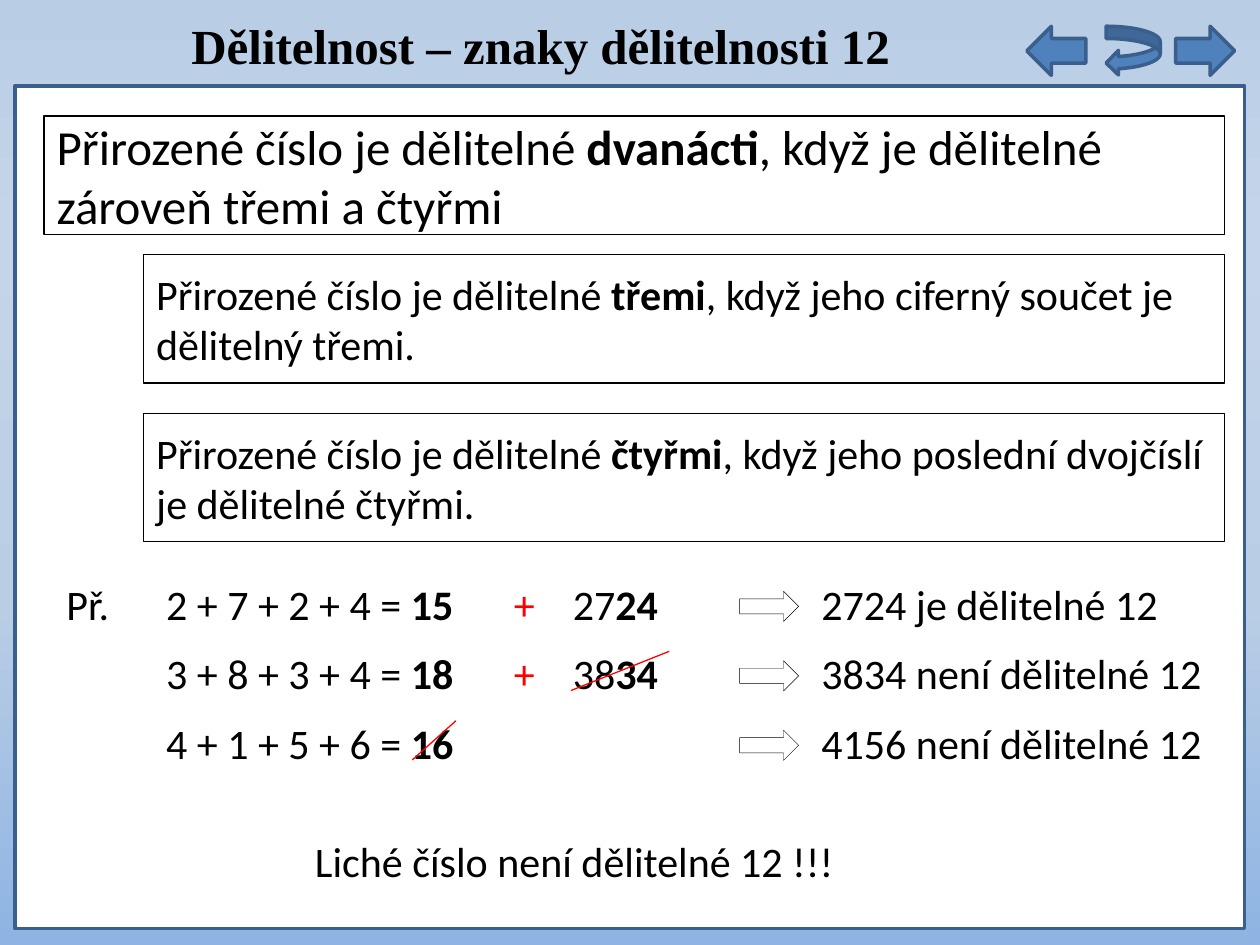
from dataclasses import dataclass

from lxml.etree import SubElement
from pptx import Presentation
from pptx.dml.color import RGBColor as RGB
from pptx.enum.shapes import MSO_CONNECTOR as LINE, MSO_SHAPE as KIND
from pptx.enum.text import MSO_ANCHOR as ANCHOR, MSO_AUTO_SIZE as AUTO, PP_ALIGN as ALIGN
from pptx.oxml.ns import qn
from pptx.util import Cm, Pt


@dataclass(frozen=True)
class Theme:
    head: str = "Times New Roman"
    body: str = "Calibri"
    big: int = 28
    mid: int = 24
    ink: str = "000000"
    red: str = "FF0000"
    blue: str = "4F81BD"
    edge: str = "3A5F8C"
    white: str = "FFFFFF"
    sky: tuple = ((0, "B9CDE5"), (25, "C5D5E9"), (64, "B9CDE5"), (100, "8EB4E3"))


T = Theme()

# Content: runs are (text, bold); boxes are (left, top, width, height) in cm
TITLE = "Dělitelnost – znaky dělitelnosti 12"
START = "Přirozené číslo je dělitelné "
RULES = [
    ((0.89, 2.34, 23.8, 2.39), T.big, "dvanácti", ", když je dělitelné zároveň třemi a čtyřmi"),
    ((2.9, 5.13, 21.79, 2.59), T.mid, "třemi", ", když jeho ciferný součet je dělitelný třemi."),
    ((2.9, 8.33, 21.79, 2.59), T.mid, "čtyřmi", ", když jeho poslední dvojčíslí je dělitelné čtyřmi."),
]
ROWS = [
    {"label": [("Př.", False)],
     "sum": [("2 + 7 + 2 + 4 = ", False), ("15", True)],
     "plus": [("+", False)],
     "number": [("27", False), ("24", True)],
     "verdict": [("2724 je dělitelné 12", False)]},
    {"sum": [("3 + 8 + 3 + 4 = ", False), ("18", True)],
     "plus": [("+", False)],
     "number": [("38", False), ("34", True)],
     "verdict": [("3834 není dělitelné 12", False)]},
    {"sum": [("4 + 1 + 5 + 6 = ", False), ("16", True)],
     "verdict": [("4156 není dělitelné 12", False)]},
]
COLS = {"label": (1.09, 1.6), "sum": (3.1, 7.01), "plus": (10.11, 1.37),
        "number": (11.3, 2.59), "verdict": (16.31, 8.41)}
TOP, STEP, HIGH = 11.53, 1.4, 1.19
NOTE = "Liché číslo není dělitelné 12 !!!"
STRIKES = [(11.51, 13.92, 13.49, 13.13), (8.31, 15.32, 9.19, 14.53)]
BUTTONS = [(KIND.RIGHT_ARROW, 23.7, 1.19, False), (KIND.RIGHT_ARROW, 20.7, 1.19, True),
           (KIND.CURVED_LEFT_ARROW, 22.3, 1.09, False)]


def write(frame, runs, size, font=T.body, color=T.ink, align=ALIGN.LEFT, anchor=ANCHOR.TOP):
    frame.word_wrap = True
    frame.auto_size = AUTO.NONE
    frame.vertical_anchor = anchor
    para = frame.paragraphs[0]
    para.alignment = align
    for text, bold in runs:
        run = para.add_run()
        run.text = text
        run.font.name, run.font.size, run.font.bold = font, Pt(size), bold
        run.font.color.rgb = RGB.from_string(color)


def shape(slide, kind, box, line, width, fill=None):
    item = slide.shapes.add_shape(kind, *map(Cm, box))
    item.shadow.inherit = False
    if fill:
        item.fill.solid()
        item.fill.fore_color.rgb = RGB.from_string(fill)
    else:
        item.fill.background()
    item.line.color.rgb = RGB.from_string(line)
    item.line.width = Pt(width)
    return item


def label(slide, box, runs, color=T.ink):
    item = slide.shapes.add_textbox(*map(Cm, box))
    write(item.text_frame, runs, T.mid, color=color)


def strike(slide, ends):
    item = slide.shapes.add_connector(LINE.STRAIGHT, *map(Cm, ends))
    item.line.color.rgb = RGB.from_string(T.red)
    item.line.width = Pt(0.75)
    SubElement(item.element.spPr, qn("a:effectLst"))


def paint(slide):
    fill = slide.background.fill
    fill.gradient()
    fill.gradient_angle = 270
    stops = slide.element.find(".//" + qn("a:gsLst"))
    for old in list(stops):
        stops.remove(old)
    for pos, color in T.sky:
        stop = SubElement(stops, qn("a:gs"), pos=str(pos * 1000))
        SubElement(stop, qn("a:srgbClr"), val=color)


def main():
    deck = Presentation()
    deck.slide_width, deck.slide_height = Cm(25.4), Cm(19.05)
    slide = deck.slides.add_slide(deck.slide_layouts[5])
    paint(slide)

    # Title
    title = slide.shapes.title
    title.left, title.top, title.width, title.height = map(Cm, (0.08, -0.08, 21.64, 1.96))
    write(title.text_frame, [(TITLE, True)], T.big, T.head, align=ALIGN.CENTER, anchor=ANCHOR.MIDDLE)

    # Panel and navigation buttons
    shape(slide, KIND.RECTANGLE, (0.3, 1.73, 24.79, 16.99), T.edge, 2, T.white)
    for kind, left, wide, flip in BUTTONS:
        item = shape(slide, kind, (left, 0.53, wide, 0.99), T.edge, 2, T.blue)
        if flip:
            item.element.spPr.find(qn("a:xfrm")).set("flipH", "1")

    # Rules
    for box, size, key, rest in RULES:
        item = shape(slide, KIND.RECTANGLE, box, T.ink, 0.75)
        write(item.text_frame, [(START, False), (key, True), (rest, False)], size, anchor=ANCHOR.MIDDLE)

    # Worked examples
    for i, row in enumerate(ROWS):
        top = TOP + i * STEP
        for name, runs in row.items():
            left, wide = COLS[name]
            label(slide, (left, top, wide, HIGH), runs, T.red if name == "plus" else T.ink)
        shape(slide, KIND.RIGHT_ARROW, (14.91, top + 0.39, 1.19, 0.61), T.ink, 0.25)
    for ends in STRIKES:
        strike(slide, ends)

    # Closing note
    label(slide, (6.1, 16.71, 11.81, HIGH), [(NOTE, False)])
    deck.save("out.pptx")


if __name__ == "__main__":
    main()
